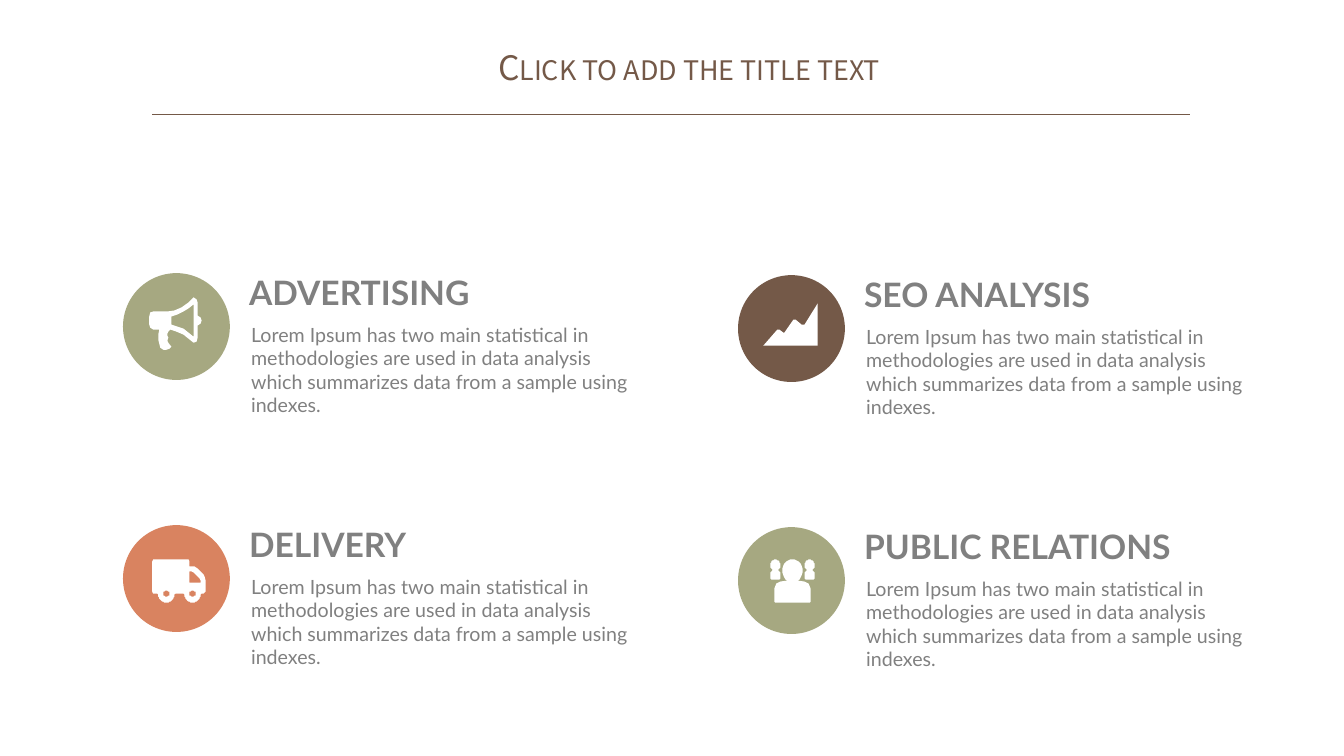
import math

import lxml.etree
import pptx
import pptx.dml.color
import pptx.enum.shapes
import pptx.enum.text
import pptx.oxml.ns
import pptx.util

Inches = pptx.util.Inches
SAGE, BROWN, ORANGE = "A6A881", "745948", "D98360"
GREY, WHITE = "808080", "FFFFFF"
DISC = 1.06
DESCRIPTION = ("Lorem Ipsum has two main statistical in methodologies are used in "
               "data analysis which summarizes data from a sample using indexes.")


def color(hex_string):
    return pptx.dml.color.RGBColor.from_string(hex_string)


def arc(cx, cy, rx, ry, start, end, steps=24):
    """Points along an ellipse; degrees run clockwise from the right."""
    angles = [math.radians(start + (end - start) * i / steps) for i in range(steps + 1)]
    return [(cx + rx * math.cos(a), cy + ry * math.sin(a)) for a in angles]


def person(cx, head_y, rx, ry, half, top, bottom):
    """Outline of a head on shoulders."""
    shoulder = top + (bottom - top) * 0.35
    right = [(half * 0.65, top), (half * 0.9, top + 2), (half, shoulder),
             (half, bottom - 1), (half - 1, bottom)]
    return (arc(cx, head_y, rx, ry, 120, 420)
            + [(cx + x, y) for x, y in right]
            + [(cx - x, y) for x, y in reversed(right)])


# Icon outlines in hundredths of an inch from the corner of the disc's box
MEGAPHONE = [
    [(78, 47), (77, 50), (74, 52), (74, 64), (73, 68), (70, 69), (65, 65), (60, 61),
     (53, 58), (47, 56), (45, 58), (44, 60), (44, 62), (45, 64), (44, 67), (45, 69),
     (48, 73), (46, 75), (43, 76), (40, 76), (37, 74), (36, 70), (35, 66), (35, 61),
     (36, 56), (30, 56), (27, 54), (26, 51), (26, 43), (27, 39), (30, 38), (44, 38),
     (51, 37), (58, 34), (65, 29), (70, 24), (73, 26), (74, 29), (74, 42), (77, 44)],
    [(70, 31), (65, 35), (60, 38), (54, 41), (48, 43), (48, 51), (54, 53), (60, 55),
     (65, 59), (70, 63)],
]
AREA_CHART = [
    [(79, 28), (66, 49), (63, 49), (57, 44), (55, 44), (46, 57), (45, 57), (41, 54),
     (39, 54), (25, 70), (79, 70)],
]
WHEELS = [43, 69]
TRUCK = [
    [(32, 34), (30, 34), (29, 36), (29, 66), (30, 68), (32, 68)]
    + [point for x in WHEELS for point in arc(x, 68, 8.5, 9, 180, 0)]
    + [(80, 68), (82, 66), (82, 55), (81, 51), (80, 49), (74, 43), (71, 41), (68, 41),
       (66, 41), (66, 36), (65, 34)],
    [(66, 46), (68, 46), (70, 47), (76, 53), (77, 55), (77, 57), (66, 57)],
] + [arc(x, 68, 3, 3, 0, 360) for x in WHEELS]
PEOPLE = [person(54, 43.5, 10, 11.5, 18, 54, 75)] + [
    person(x, 38, 5, 6, 5, 43, 52) for x in (37, 71)]

SERVICES = [
    ("ADVERTISING", SAGE, MEGAPHONE),
    ("SEO ANALYSIS", BROWN, AREA_CHART),
    ("DELIVERY", ORANGE, TRUCK),
    ("PUBLIC RELATIONS", SAGE, PEOPLE),
]


def fill_flat(shape, hex_string):
    shape.shadow.inherit = False
    shape.fill.solid()
    shape.fill.fore_color.rgb = color(hex_string)
    shape.line.fill.background()


def set_margins(frame, side, end):
    frame.margin_left = frame.margin_right = Inches(side)
    frame.margin_top = frame.margin_bottom = Inches(end)
    frame.word_wrap = True


def format_font(font, name, size, hex_string, bold=False):
    font.name = name
    font.size = pptx.util.Pt(size)
    font.bold = bold
    font.color.rgb = color(hex_string)


def add_header(slide, left, top, width):
    title = slide.shapes.title
    title.left, title.top = Inches(left + 3.07), Inches(top)
    title.width, title.height = Inches(4.51), Inches(0.48)
    frame = title.text_frame
    frame.text = "Click to add the title text"
    set_margins(frame, 0.08, 0.04)
    frame.auto_size = pptx.enum.text.MSO_AUTO_SIZE.NONE
    frame.vertical_anchor = pptx.enum.text.MSO_ANCHOR.MIDDLE
    heading = frame.paragraphs[0]
    heading.alignment = pptx.enum.text.PP_ALIGN.CENTER
    heading.line_spacing = 0.9
    run = heading.runs[0]
    format_font(run.font, "Noto Sans CJK SC", 24, BROWN)
    run.font._element.set("cap", "small")

    rule_y = Inches(top + 0.69)
    rule = slide.shapes.add_connector(
        pptx.enum.shapes.MSO_CONNECTOR.STRAIGHT,
        Inches(left), rule_y, Inches(left + width), rule_y)
    rule.line.color.rgb = color(BROWN)
    rule.line.width = pptx.util.Pt(0.75)
    lxml.etree.SubElement(rule._element.spPr, pptx.oxml.ns.qn("a:effectLst"))


def add_label(slide, text, box, margins, size, bold=False):
    label = slide.shapes.add_textbox(*[Inches(length) for length in box])
    label.text_frame.text = text
    set_margins(label.text_frame, *margins)
    format_font(label.text_frame.paragraphs[0].runs[0].font, "Lato", size, GREY, bold)


def add_icon(slide, outlines, left, top):
    start = outlines[0][0]
    builder = slide.shapes.build_freeform(*start, scale=Inches(0.01))
    for outline in outlines:
        builder.move_to(*outline[0])
        builder.add_line_segments(outline[1:], close=True)
    fill_flat(builder.convert_to_shape(Inches(left), Inches(top)), WHITE)


def add_service(slide, left, top, name, disc_color, outlines):
    disc = slide.shapes.add_shape(
        pptx.enum.shapes.MSO_SHAPE.OVAL,
        Inches(left), Inches(top), Inches(DISC), Inches(DISC))
    fill_flat(disc, disc_color)
    add_label(slide, name, (left + 1.05, top - 0.11, 3.7, 0.61), (0.2, 0.1), 24, True)
    add_label(slide, DESCRIPTION, (left + 1.03, top + 0.37, 4.41, 1.18), (0.24, 0.12), 14)
    add_icon(slide, outlines, left, top)


def main():
    presentation = pptx.Presentation()
    presentation.slide_width, presentation.slide_height = Inches(13.33), Inches(7.5)
    slide = presentation.slides.add_slide(presentation.slide_layouts[5])
    add_header(slide, 1.51, 0.45, 10.29)
    for index, service in enumerate(SERVICES):
        row, column = divmod(index, 2)
        add_service(slide, 1.22 + 6.1 * column, 2.71 + 2.5 * row + 0.02 * column, *service)
    presentation.save("out.pptx")


if __name__ == "__main__":
    main()
